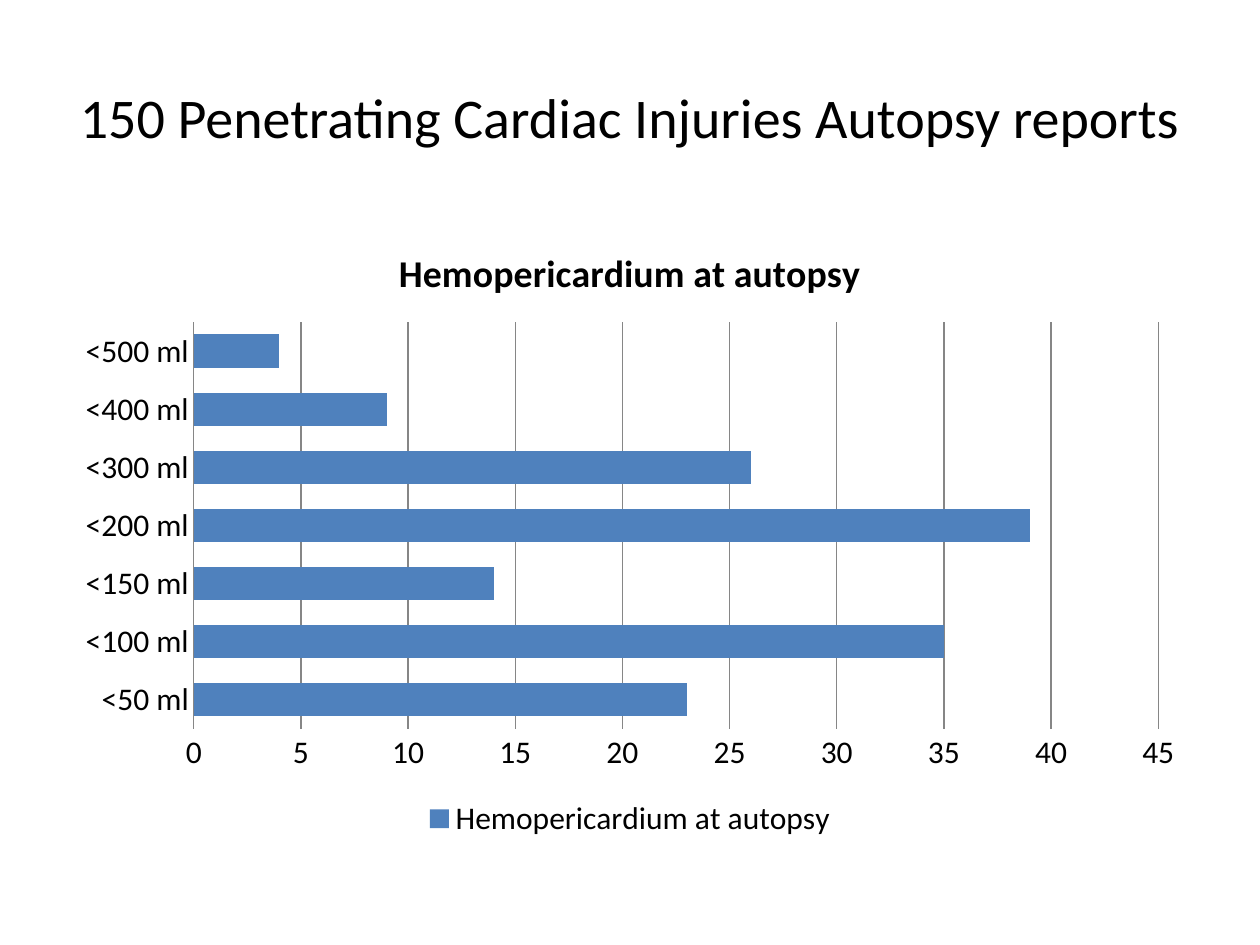
from dataclasses import dataclass

import pptx
import pptx.chart.data
import pptx.dml.color
import pptx.enum.chart
import pptx.enum.text
import pptx.util


@dataclass(frozen=True)
class Theme:
    font: str = "Calibri"
    ink: str = "000000"
    bar: str = "4F81BD"
    grid: str = "868686"
    head: float = 32
    title: float = 21.6
    body: float = 18


THEME = Theme()
WIDE, HIGH = 10, 7.5
MARGIN = 0.05
LIMITS = (50, 100, 150, 200, 300, 400, 500)
COUNTS = (23, 35, 14, 39, 26, 9, 4)
LABEL = "Hemopericardium at autopsy"


def color(code):
    return pptx.dml.color.RGBColor.from_string(code)


def style(font, size, bold=False):
    font.name = THEME.font
    font.size = pptx.util.Pt(size)
    font.bold = bold
    font.color.rgb = color(THEME.ink)


def frame(top, height):
    return [pptx.util.Inches(value) for value in (
        MARGIN * WIDE, top * HIGH, (1 - 2 * MARGIN) * WIDE, height * HIGH)]


def add_title(slide, text):
    shape = slide.shapes.title
    shape.left, shape.top, shape.width, shape.height = frame(0.04, 1 / 6)
    box = shape.text_frame
    box.text = text
    box.word_wrap = True
    box.auto_size = pptx.enum.text.MSO_AUTO_SIZE.NONE
    box.vertical_anchor = pptx.enum.text.MSO_ANCHOR.MIDDLE
    line = box.paragraphs[0]
    line.alignment = pptx.enum.text.PP_ALIGN.CENTER
    style(line.font, THEME.head)


def style_axes(chart):
    none = pptx.enum.chart.XL_TICK_MARK.NONE
    for axis in (chart.category_axis, chart.value_axis):
        axis.major_tick_mark = axis.minor_tick_mark = none
        style(axis.tick_labels.font, THEME.body)
    chart.category_axis.format.line.color.rgb = color(THEME.grid)
    values = chart.value_axis
    values.minimum_scale, values.maximum_scale, values.major_unit = 0, 45, 5
    values.format.line.fill.background()
    values.has_major_gridlines = True
    values.major_gridlines.format.line.color.rgb = color(THEME.grid)
    values.major_gridlines.format.line.width = pptx.util.Pt(0.75)


def style_bars(plot):
    plot.gap_width = 75
    plot.overlap = 100
    plot.vary_by_categories = False
    fill = plot.series[0].format.fill
    fill.solid()
    fill.fore_color.rgb = color(THEME.bar)


def add_bars(slide):
    data = pptx.chart.data.CategoryChartData()
    data.categories = [f"<{limit} ml" for limit in LIMITS]
    data.add_series(LABEL, COUNTS)
    kind = pptx.enum.chart.XL_CHART_TYPE.BAR_STACKED
    chart = slide.shapes.add_chart(kind, *frame(7 / 30, 0.66), data).chart
    style(chart.font, THEME.body)
    chart.has_title = True
    chart.chart_title.text_frame.text = LABEL
    style(chart.chart_title.text_frame.paragraphs[0].font, THEME.title, True)
    chart.chart_title.include_in_layout = False
    chart.has_legend = True
    chart.legend.position = pptx.enum.chart.XL_LEGEND_POSITION.BOTTOM
    chart.legend.include_in_layout = False
    style(chart.legend.font, THEME.body)
    style_axes(chart)
    style_bars(chart.plots[0])


def main():
    deck = pptx.Presentation()
    deck.slide_width = pptx.util.Inches(WIDE)
    deck.slide_height = pptx.util.Inches(HIGH)
    slide = deck.slides.add_slide(deck.slide_layouts.get_by_name("Title Only"))
    add_title(slide, "150 Penetrating Cardiac Injuries Autopsy reports")
    add_bars(slide)
    deck.save("out.pptx")


if __name__ == "__main__":
    main()
